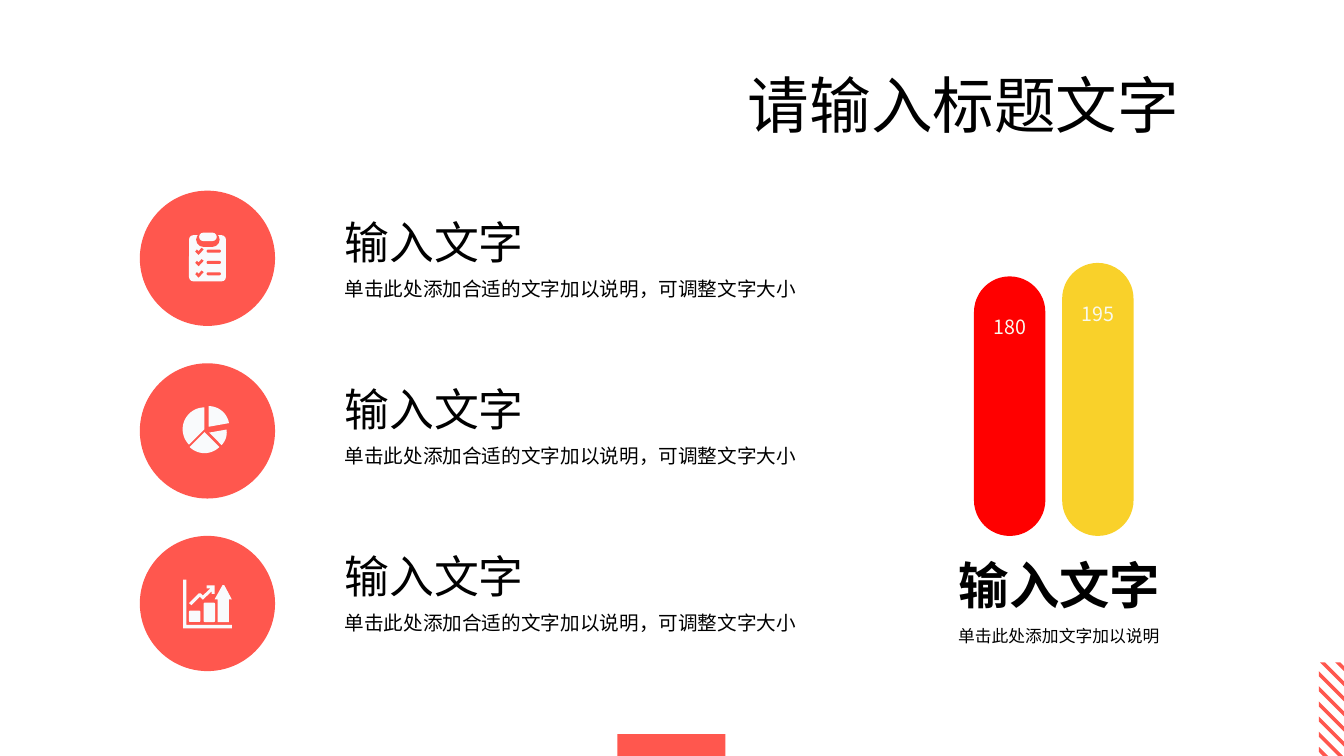
"""Build a slide with three icon points, a pair of rounded bars and a title."""
from dataclasses import dataclass
from math import cos, radians, sin
from typing import Callable

from lxml import etree
from pptx import Presentation
from pptx.dml.color import RGBColor
from pptx.enum.shapes import MSO_SHAPE
from pptx.enum.text import MSO_ANCHOR, PP_ALIGN
from pptx.oxml.ns import qn
from pptx.util import Emu, Pt

RECT, OVAL, ROUNDED = MSO_SHAPE.RECTANGLE, MSO_SHAPE.OVAL, MSO_SHAPE.ROUNDED_RECTANGLE
LEFT, CENTER = PP_ALIGN.LEFT, PP_ALIGN.CENTER
TOP = MSO_ANCHOR.TOP

CORAL = RGBColor(0xFF, 0x57, 0x4E)
ICON_WHITE = RGBColor(0xF9, 0xFA, 0xFC)
IVORY = RGBColor(0xF9, 0xF9, 0xED)
RED = RGBColor(0xFF, 0x00, 0x00)
YELLOW = RGBColor(0xF9, 0xD1, 0x2A)
BLACK = RGBColor(0x00, 0x00, 0x00)

CJK_FONT = "Noto Sans CJK JP"
COLUMNS, ROWS = 160, 90
SLIDE_WIDTH, SLIDE_HEIGHT = Emu(12192000), Emu(6858000)
CELL = SLIDE_WIDTH / COLUMNS

Point = tuple[float, float]


@dataclass(frozen=True)
class Box:
    """A rectangle in grid cells."""
    column: float
    row: float
    columns: float
    rows: float

    def emu(self) -> list[Emu]:
        """Return left, top, width and height in EMU."""
        return [Emu(round(n * CELL)) for n in (self.column, self.row, self.columns, self.rows)]


@dataclass(frozen=True)
class Topic:
    """A point with its icon, heading and detail."""
    draw_icon: Callable[..., None]
    heading: str
    detail: str


@dataclass(frozen=True)
class Bar:
    """A rounded bar with its value and height in rows."""
    value: str
    rows: float
    color: RGBColor


def paint(shape, color: RGBColor) -> None:
    """Give a shape a flat fill without line or shadow."""
    shape.shadow.inherit = False
    shape.fill.solid()
    shape.fill.fore_color.rgb = color
    shape.line.fill.background()


def add_block(slide, preset, box: Box, color: RGBColor, corner: float | None = None):
    """Draw a flat preset shape."""
    block = slide.shapes.add_shape(preset, *box.emu())
    paint(block, color)
    if corner is not None:
        block.adjustments[0] = corner
    return block


def add_outline(slide, points: list[Point], color: RGBColor, origin: Point = (0, 0)) -> None:
    """Draw a closed flat polygon around an origin."""
    vertices = [(round((origin[0] + x) * CELL), round((origin[1] + y) * CELL)) for x, y in points]
    builder = slide.shapes.build_freeform(*vertices[0], scale=1.0)
    builder.add_line_segments(vertices[1:], close=True)
    paint(builder.convert_to_shape(), color)


def write(frame, text: str, *, size: float, color: RGBColor = BLACK, font: str = CJK_FONT,
          bold: bool = False, align=LEFT, spacing: float | None = None) -> None:
    """Fill a text frame with one formatted paragraph."""
    frame.word_wrap = True
    frame.vertical_anchor = TOP
    paragraph = frame.paragraphs[0]
    paragraph.alignment = align
    if spacing:
        paragraph.line_spacing = spacing
    run = paragraph.add_run()
    run.text = text
    run.font.size, run.font.bold, run.font.name = Pt(size), bold, font
    run.font.color.rgb = color
    etree.SubElement(run.font._element, qn("a:ea"), typeface=CJK_FONT)


def add_text(slide, box: Box, text: str, **style) -> None:
    """Place formatted text in a box."""
    write(slide.shapes.add_textbox(*box.emu()).text_frame, text, **style)


def draw_checklist(slide, x: float, y: float) -> None:
    """Draw a clipboard with three ticked lines."""
    add_block(slide, ROUNDED, Box(x - 2.2, y - 2.75, 4.4, 5.5), ICON_WHITE, 0.12)
    add_block(slide, ROUNDED, Box(x - 1.35, y - 3.1, 2.8, 1.75), CORAL, 0.5)
    add_block(slide, ROUNDED, Box(x - 1, y - 3.05, 2.1, 1), ICON_WHITE, 0.5)
    tick = [(-1.45, 0.05), (-1.25, -0.2), (-1.05, 0), (-0.7, -0.4), (-0.45, -0.2), (-1.05, 0.45)]
    for line in range(3):
        middle = y - 0.85 + 1.35 * line
        add_outline(slide, tick, CORAL, (x, middle))
        add_block(slide, ROUNDED, Box(x - 0.1, middle - 0.18, 1.7, 0.36), CORAL, 0.5)


def draw_pie(slide, x: float, y: float) -> None:
    """Draw a pie of four separated slices."""
    slices = [(0.15, -0.5, 2.45, -90, -10), (-0.35, 0.15, 2.5, 45, 135),
              (0.2, 0.2, 2.1, -10, 45), (-0.35, -0.2, 2.6, 135, 270)]
    for apex_x, apex_y, radius, start, end in slices:
        angles = [radians(start + (end - start) * step / 24) for step in range(25)]
        rim = [(apex_x + radius * cos(a), apex_y + radius * sin(a)) for a in angles]
        add_outline(slide, [(apex_x, apex_y), *rim], ICON_WHITE, (x, y))


def draw_growth(slide, x: float, y: float) -> None:
    """Draw rising bars with axes and a trend arrow."""
    axes = [(-2.9, -2.85), (-2.5, -2.85), (-2.5, 2.55), (2.9, 2.55), (2.9, 2.95), (-2.9, 2.95)]
    trend = [(-2.2, -0.05), (-1.05, -1.2), (-0.8, -1.2), (-0.55, -0.95), (0.35, -1.8),
             (-0.1, -1.8), (-0.1, -2.15), (0.85, -2.15), (0.85, -1.15), (0.5, -1.15),
             (0.5, -1.45), (-0.55, -0.45), (-0.9, -0.8), (-1.9, 0.2)]
    rising_arrow = [(0.85, -0.5), (1.8, -2.2), (2, -2.2), (2.9, -0.5), (2.55, -0.5),
                    (2.55, 2.2), (1.2, 2.2), (1.2, -0.5)]
    for points in (axes, trend, rising_arrow):
        add_outline(slide, points, ICON_WHITE, (x, y))
    for column, row in ((-2.2, 0.85), (-0.45, -0.1)):
        add_block(slide, ROUNDED, Box(x + column, y + row, 1.35, 2.2 - row), ICON_WHITE, 0.1)


def draw_decoration(slide) -> None:
    """Draw the bottom tab and the striped corner."""
    add_block(slide, RECT, Box(73.5, 87.4, 12.85, 2.6), CORAL)
    left, ceiling, width, thickness = 157, 78.85, 3, 0.6
    for stripe in range(-2, 6):
        upper = 79.9 + 1.8 * stripe
        lower = upper + thickness
        corners = [(edge, max(0, ceiling - edge), min(width, ROWS - edge))
                   for edge in (upper, lower)]
        (top, top_start, top_end), (base, base_start, base_end) = corners
        add_outline(slide, [(top_start, top + top_start), (top_end, top + top_end),
                            (base_end, base + base_end), (base_start, base + base_start)],
                    CORAL, (left, 0))


def draw_topics(slide, topics: list[Topic]) -> None:
    """Draw the icon circles and their texts down the left side."""
    diameter, text_column = 16.1, 39.84
    for index, topic in enumerate(topics):
        disc = Box(16.65, 22.7 + 20.55 * index, diameter, diameter)
        add_block(slide, OVAL, disc, CORAL)
        topic.draw_icon(slide, disc.column + diameter / 2, disc.row + diameter / 2)
        row = 24.95 + 19.9 * index
        add_text(slide, Box(text_column, row, 55.2, 7.7), topic.heading, size=32)
        add_text(slide, Box(text_column, row + 7.4, 56.4, 4.1), topic.detail, size=14)


def draw_bars(slide, bars: list[Bar]) -> None:
    """Draw the rounded bars on a shared base line with a caption."""
    base = 63.8
    for index, bar in enumerate(bars):
        box = Box(115.95 + 10.5 * index, base - bar.rows, 8.5, bar.rows)
        frame = add_block(slide, ROUNDED, box, bar.color, 0.5).text_frame
        frame.margin_left = frame.margin_right = 0
        frame.margin_top = Emu(round(3.36 * CELL))
        write(frame, bar.value, size=14, color=IVORY, align=CENTER)
    add_text(slide, Box(109.44, 71.52, 33.24, 5.4), "单击此处添加文字加以说明",
             size=12, align=CENTER, spacing=2.0)
    add_text(slide, Box(110.64, 65.4, 30.96, 8.5), "输入文字", size=36, bold=True, align=CENTER)


def main() -> None:
    """Build and save the slide."""
    deck = Presentation()
    deck.slide_width, deck.slide_height = SLIDE_WIDTH, SLIDE_HEIGHT
    slide = deck.slides.add_slide(deck.slide_layouts[5])
    title = slide.shapes.title
    title.left, title.top, title.width, title.height = Box(87.84, 7.32, 57.24, 10.1).emu()
    write(title.text_frame, "请输入标题文字", size=44, font="Calibri")
    draw_decoration(slide)
    detail = "单击此处添加合适的文字加以说明，可调整文字大小"
    draw_topics(slide, [Topic(icon, "输入文字", detail)
                        for icon in (draw_checklist, draw_pie, draw_growth)])
    draw_bars(slide, [Bar("180", 30.9, RED), Bar("195", 32.5, YELLOW)])
    deck.save("out.pptx")


if __name__ == "__main__":
    main()
